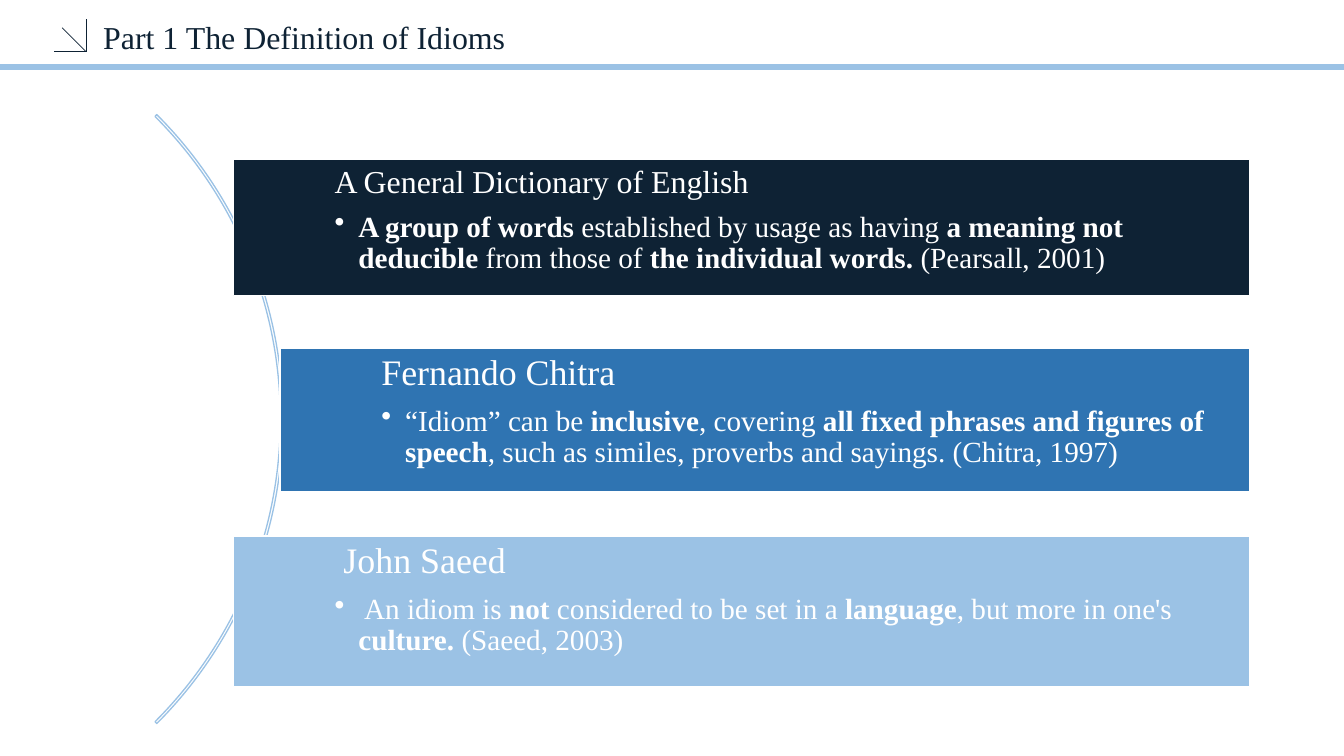
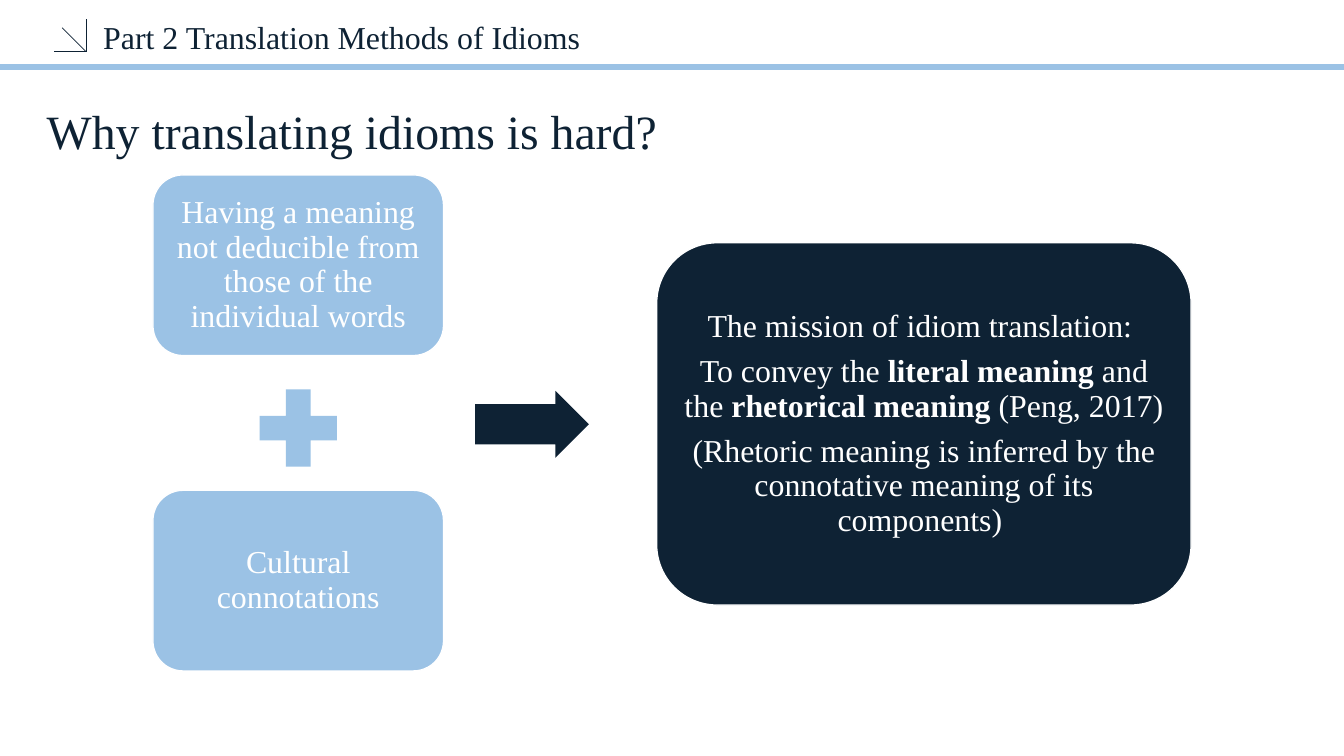
import pptx
import pptx.dml.color
import pptx.enum.shapes
import pptx.enum.text
import pptx.oxml.ns
import pptx.util
from lxml import etree

Inches, Pt = pptx.util.Inches, pptx.util.Pt
SHAPE = pptx.enum.shapes.MSO_SHAPE
ALIGN = pptx.enum.text.PP_ALIGN
ANCHOR = pptx.enum.text.MSO_ANCHOR

WIDTH, HEIGHT = 14.06, 7.91
FONT = "Times New Roman"
NAVY, BLUE, SKY, WHITE = "0E2234", "2F74B2", "9BC2E5", "FFFFFF"

# Bold words stand between ** marks.
TITLES = ["Part 1 The Definition of Idioms", "Part 2 Translation Methods of Idioms"]
DEFINITIONS = [  # source, source size, definition, colour, left, height
    ("A General Dictionary of English", 24,
     "**A group of words **established by usage as having **a meaning not deducible "
     "**from those of **the individual words. **(Pearsall, 2001)", NAVY, 2.44, 1.42),
    ("Fernando Chitra", 27,
     "“Idiom” can be **inclusive**, covering **all fixed phrases and figures of speech**"
     ", such as similes, proverbs and sayings. (Chitra, 1997)", BLUE, 2.93, 1.5),
    (" John Saeed", 27,
     " An idiom is **not** considered to be set in a **language**, but more in one's "
     "**culture. **(Saeed, 2003)", SKY, 2.44, 1.57),
]
QUESTION = "Why translating idioms is hard?"
REASONS = [
    ("Having a meaning not deducible from those of the individual words",
     SHAPE.FLOWCHART_ALTERNATE_PROCESS),
    ("Cultural connotations", SHAPE.ROUNDED_RECTANGLE),
]
MISSION = [
    "The mission of idiom translation: ",
    "To convey the **literal meaning** and the **rhetorical meaning** (Peng, 2017)",
    "(Rhetoric meaning is inferred by the connotative meaning of its components) ",
]


def color(hex_string):
    return pptx.dml.color.RGBColor.from_string(hex_string)


def add_line(slide, start, end, line_color, width):
    line = slide.shapes.add_connector(
        pptx.enum.shapes.MSO_CONNECTOR.STRAIGHT, *map(Inches, start + end))
    line.line.color.rgb = color(line_color)
    line.line.width = Pt(width)
    etree.SubElement(line._element.spPr, pptx.oxml.ns.qn("a:effectLst"))


def add_shape(slide, kind, box, fill=None, outline=None):
    shape = slide.shapes.add_shape(kind, *map(Inches, box))
    shape.shadow.inherit = False
    if fill:
        shape.fill.solid()
        shape.fill.fore_color.rgb = color(fill)
    else:
        shape.fill.background()
    if outline:
        shape.line.color.rgb = color(outline)
        shape.line.width = Pt(1)
    else:
        shape.line.fill.background()
    return shape


def set_frame(shape, anchor, insets, wrap=True):
    frame = shape.text_frame
    frame.word_wrap = wrap
    frame.vertical_anchor = anchor
    (frame.margin_left, frame.margin_top,
     frame.margin_right, frame.margin_bottom) = map(Inches, insets)
    return frame


def write(paragraph, text, size, text_color, align=ALIGN.LEFT):
    paragraph.alignment = align
    for index, part in enumerate(text.split("**")):
        if part:
            run = paragraph.add_run()
            run.text = part
            run.font.name = FONT
            run.font.size = Pt(size)
            run.font.bold = index % 2 == 1
            run.font.color.rgb = color(text_color)


def space(paragraph, after):
    paragraph.line_spacing = 0.9
    paragraph.space_after = Pt(after)


def add_bullet(paragraph, indent):
    properties = paragraph._p.get_or_add_pPr()
    properties.set("marL", str(Inches(indent)))
    properties.set("indent", str(-Inches(indent)))
    etree.SubElement(properties, pptx.oxml.ns.qn("a:buChar")).set("char", "•")


def add_text(slide, box, text, size, anchor, insets, wrap=True):
    frame = set_frame(slide.shapes.add_textbox(*map(Inches, box)), anchor, insets, wrap)
    write(frame.paragraphs[0], text, size, NAVY)


def add_titled_slide(presentation, title):
    slide = presentation.slides.add_slide(presentation.slide_layouts[6])
    add_line(slide, (0, 0.7), (WIDTH, 0.7), SKY, 4.5)
    corner = (0.9, 0.54)
    for tail in [(0.57, 0.54), (0.9, 0.2), (0.65, 0.29)]:
        add_line(slide, corner, tail, NAVY, 0.5)
    add_text(slide, (0.97, 0.15, 5.75, 0.47), title, 24, ANCHOR.MIDDLE,
             (0.11, 0.05, 0.11, 0.05))
    return slide


def build_definitions(slide):
    right, first_top, pitch = 13.07, 1.67, 1.97
    arc = add_shape(slide, SHAPE.BLOCK_ARC, (-6.05, -0.12, 9.01, 9.01), outline=SKY)
    for index, value in enumerate((189, 27, 0.003)):
        arc.adjustments[index] = value
    for row, (source, size, definition, fill, left, height) in enumerate(DEFINITIONS):
        box = (left, first_top + row * pitch, right - left, height)
        band = add_shape(slide, SHAPE.RECTANGLE, box, fill, WHITE)
        frame = set_frame(band, ANCHOR.TOP, (1.06, 0.07, 0.07, 0.07))
        heading = frame.paragraphs[0]
        write(heading, source, size, WHITE)
        space(heading, 0.35 * size)
        body = frame.add_paragraph()
        body.level = 1
        write(body, definition, 22, WHITE)
        space(body, 0.15 * 22)
        add_bullet(body, 0.25)


def add_card(slide, kind, box, fill, texts):
    card = add_shape(slide, kind, box, fill, WHITE)
    frame = set_frame(card, ANCHOR.MIDDLE, (0.03,) * 4)
    for index, text in enumerate(texts):
        paragraph = frame.add_paragraph() if index else frame.paragraphs[0]
        write(paragraph, text, 24, WHITE, ALIGN.CENTER)
        space(paragraph, 0.35 * 24)


def build_reasons(slide):
    left, top, width, height, pitch = 1.6, 1.83, 3.04, 1.89, 3.3
    plus = 1.1
    for row, (text, kind) in enumerate(REASONS):
        add_card(slide, kind, (left, top + row * pitch, width, height), SKY, [text])
    add_shape(slide, SHAPE.MATH_PLUS,
              (left + (width - plus) / 2, 3.93, plus, plus), SKY)
    arrow = add_shape(slide, SHAPE.RIGHT_ARROW, (4.97, 4.09, 1.19, 0.7), NAVY)
    arrow.adjustments[0] = 0.6
    add_card(slide, SHAPE.ROUNDED_RECTANGLE, (6.87, 2.54, 5.59, 3.79), NAVY, MISSION)
    add_text(slide, (0.39, 1.01, 6.78, 0.71), QUESTION, 36, ANCHOR.TOP,
             (0.1, 0.05, 0.1, 0.05), wrap=False)


def main():
    presentation = pptx.Presentation()
    presentation.slide_width = Inches(WIDTH)
    presentation.slide_height = Inches(HEIGHT)
    for title, build in zip(TITLES, (build_definitions, build_reasons)):
        build(add_titled_slide(presentation, title))
    presentation.save("out.pptx")


if __name__ == "__main__":
    main()
